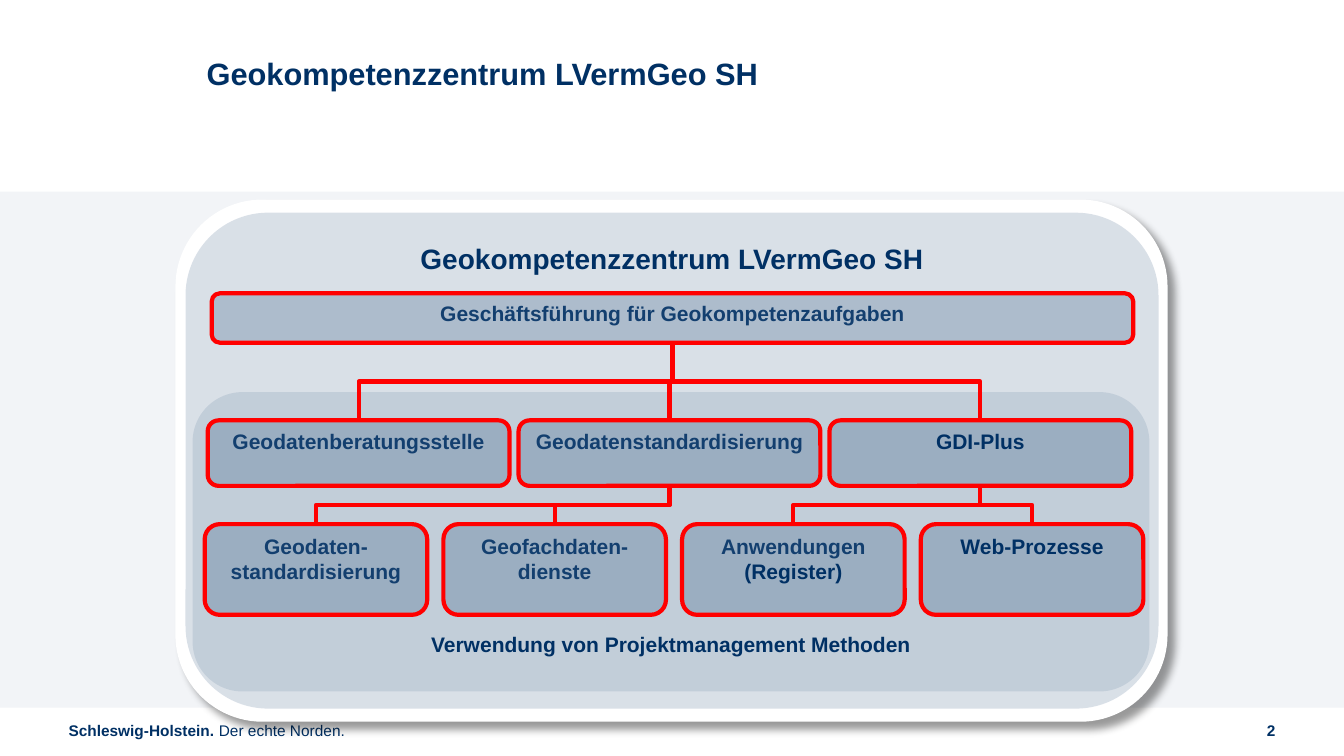
"""Build the organisation chart slide of the Geokompetenzzentrum LVermGeo SH."""
from dataclasses import dataclass

from lxml import etree
from pptx import Presentation
from pptx import util as u
from pptx.dml.color import RGBColor
from pptx.enum import shapes, text
from pptx.oxml.ns import qn


@dataclass(frozen=True)
class Theme:
    font: str = "Arial"
    navy: str = "003064"
    soft_navy: str = "133F6F"
    band: str = "F2F4F7"
    white: str = "FFFFFF"
    red: str = "FF0000"
    title: int = 22
    heading: int = 20
    label: int = 15
    footer: int = 11
    line: int = 3


T = Theme()
WIDTH, HEIGHT = 13.33, 7.5
TITLE = "Geokompetenzzentrum LVermGeo SH"
METHODS = "Verwendung von Projektmanagement Methoden"
SLOGAN = [("Schleswig-Holstein.", T.navy, True), (" Der echte Norden.", T.navy, False)]
NUMBER = [("2", T.navy, True)]

LEAD = [("Geschäftsführung für Geokompetenzaufgaben", T.soft_navy)]
TEAMS = [
    [("Geodatenberatungsstelle", T.soft_navy)],
    [("Geodatenstandardisierung", T.soft_navy)],
    [("GDI-Plus", T.navy)],
]
TASKS = [
    [("Geodaten-standardisierung", T.soft_navy)],
    [("Geofachdaten-dienste", T.soft_navy)],
    [("Anwendungen", T.soft_navy), ("(Register)", T.navy)],
    [("Web-Prozesse", T.navy)],
]
TASK_TEAM = [1, 1, 2, 2]

BAND = (0, 1.9, WIDTH, 5.12)
FRAME = (1.74, 1.98, 9.84, 5.18)
PANEL = (1.84, 2.11, 9.65, 4.92)
METHOD_PANEL = (1.91, 3.89, 9.49, 2.97)
LEAD_BOX = (2.1, 2.91, 9.14, 0.49)
TEAM_ROW = dict(left=2.06, top=4.17, right=11.22, height=0.65, gap=0.09)
TASK_ROW = dict(left=2.03, top=5.2, right=11.34, height=0.9, gap=0.16)

prs = Presentation()
prs.slide_width, prs.slide_height = u.Inches(WIDTH), u.Inches(HEIGHT)
s = prs.slides.add_slide(prs.slide_layouts[6])


def rgb(color):
    return RGBColor.from_string(color)


def write(p, runs, size, align=text.PP_ALIGN.LEFT):
    p.alignment = align
    for words, color, bold in runs:
        r = p.add_run()
        r.text = words
        r.font.name, r.font.size, r.font.bold = T.font, u.Pt(size), bold
        r.font.color.rgb = rgb(color)


def add_text(at, runs, size, align=text.PP_ALIGN.LEFT, anchor=text.MSO_ANCHOR.MIDDLE):
    tf = s.shapes.add_textbox(*map(u.Inches, at)).text_frame
    tf.word_wrap, tf.vertical_anchor = True, anchor
    tf.margin_left = tf.margin_top = tf.margin_right = tf.margin_bottom = 0
    write(tf.paragraphs[0], runs, size, align)


def add_panel(at, color, opacity=100, kind=shapes.MSO_SHAPE.ROUNDED_RECTANGLE):
    sp = s.shapes.add_shape(kind, *map(u.Inches, at))
    sp.shadow.inherit = False
    sp.fill.solid()
    sp.fill.fore_color.rgb = rgb(color)
    sp.line.fill.background()
    if opacity < 100:
        tint = sp.fill._xPr.find(qn("a:solidFill"))[0]
        etree.SubElement(tint, qn("a:alpha"), val=str(opacity * 1000))
    return sp


def label(sp, lines, size, anchor=text.MSO_ANCHOR.TOP):
    tf = sp.text_frame
    tf.word_wrap, tf.vertical_anchor = True, anchor
    for i, (words, color) in enumerate(lines):
        p = tf.add_paragraph() if i else tf.paragraphs[0]
        write(p, [(words, color, True)], size, text.PP_ALIGN.CENTER)


def add_box(at, lines):
    sp = add_panel(at, T.navy, 20)
    sp.line.color.rgb, sp.line.width = rgb(T.red), u.Pt(T.line)
    label(sp, lines, T.label)
    return sp


def add_row(labels, left, top, right, height, gap):
    width = (right - left - gap * (len(labels) - 1)) / len(labels)
    return [add_box((left + i * (width + gap), top, width, height), lines)
            for i, lines in enumerate(labels)]


def add_shadow(sp):
    effects = sp._element.spPr.find(qn("a:effectLst"))
    shadow = etree.SubElement(effects, qn("a:outerShdw"), blurRad=str(u.Pt(6)),
                              dist=str(u.Pt(8)), dir=str(45 * 60000), algn="tl", rotWithShape="0")
    color = etree.SubElement(shadow, qn("a:srgbClr"), val="000000")
    etree.SubElement(color, qn("a:alpha"), val="40000")


def join(upper, lower):
    x1, y1 = upper.left + upper.width // 2, upper.top + upper.height
    x2, y2 = lower.left + lower.width // 2, lower.top
    c = s.shapes.add_connector(shapes.MSO_CONNECTOR.ELBOW, x1, y1, x2, y2)
    c.begin_connect(upper, 2)
    c.end_connect(lower, 0)
    run, drop = abs(x2 - x1), y2 - y1
    c.left, c.top = (x1 + x2 - drop) // 2, (y1 + y2 - run) // 2
    c.width, c.height = drop, run
    to_right = x2 > x1
    xfrm = c._element.spPr.find(qn("a:xfrm"))
    xfrm.set("rot", str((270 if to_right else 90) * 60000))
    xfrm.set("flipH", str(int(to_right)))
    xfrm.set("flipV", "0")
    c.line.color.rgb, c.line.width = rgb(T.red), u.Pt(T.line)
    etree.SubElement(c._element.spPr, qn("a:effectLst"))


add_panel(BAND, T.band, kind=shapes.MSO_SHAPE.RECTANGLE)
add_text((0.68, 7.1, 4.3, 0.29), SLOGAN, T.footer)
add_text((11.6, 7.1, 1.05, 0.29), NUMBER, T.footer, text.PP_ALIGN.RIGHT)
add_text((2.05, 0.54, 7.98, 0.81), [(TITLE, T.navy, True)], T.title,
         anchor=text.MSO_ANCHOR.TOP)

add_shadow(add_panel(FRAME, T.white))
label(add_panel(PANEL, T.navy, 15), [(TITLE, T.navy)], T.heading)
method_panel = add_panel(METHOD_PANEL, T.navy, 10)
label(method_panel, [(METHODS, T.navy)], T.label, text.MSO_ANCHOR.BOTTOM)
method_panel.text_frame.margin_bottom = u.Inches(0.2)

teams = add_row(TEAMS, **TEAM_ROW)
tasks = add_row(TASKS, **TASK_ROW)
lead = add_box(LEAD_BOX, LEAD)
for team in teams:
    join(lead, team)
for task, team in zip(tasks, TASK_TEAM):
    join(teams[team], task)

prs.save("out.pptx")
